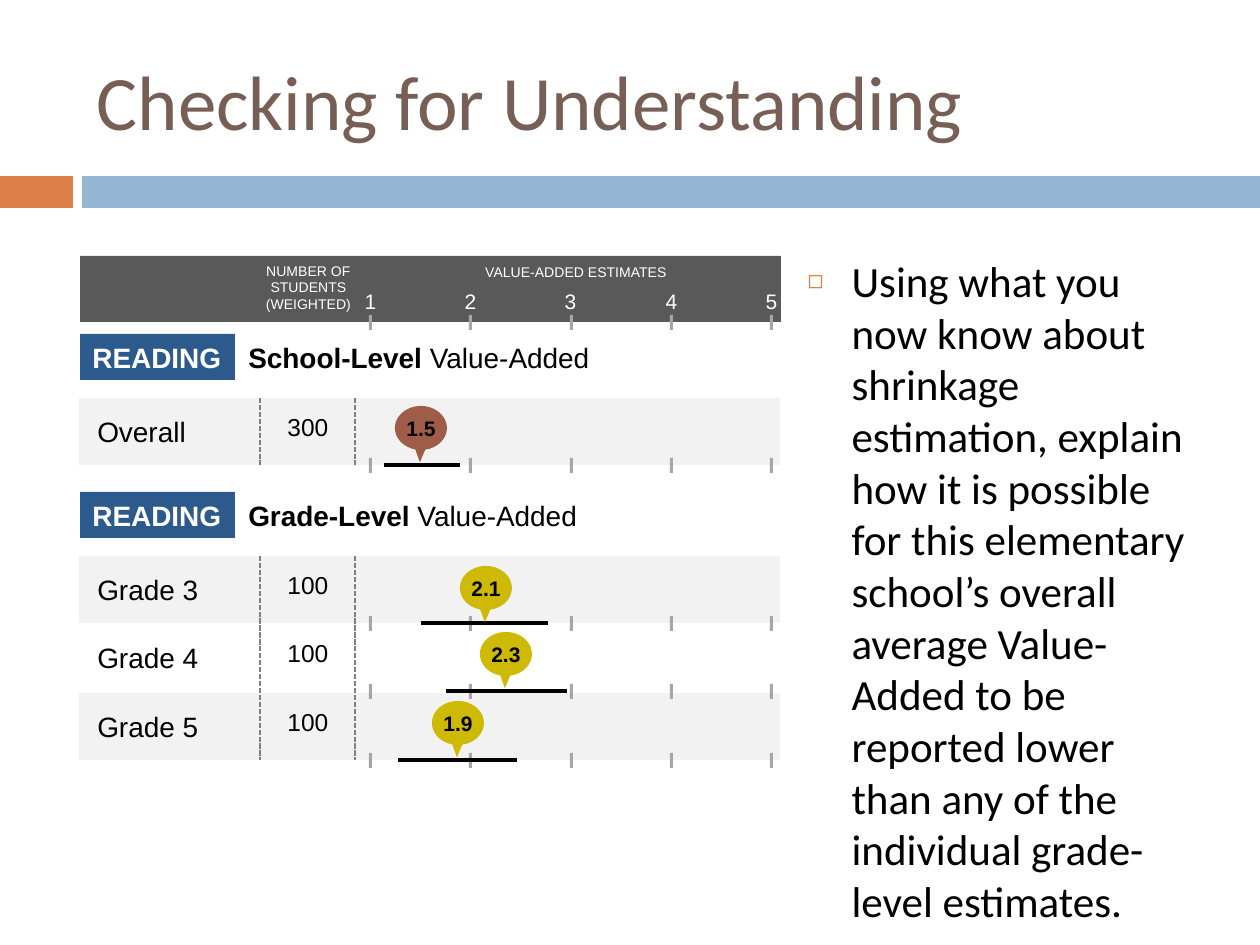
from dataclasses import dataclass
from typing import Any

from lxml.etree import SubElement
from pptx import Presentation
from pptx.dml.color import RGBColor
from pptx.enum.dml import MSO_LINE
from pptx.enum.shapes import MSO_CONNECTOR as Connector, MSO_SHAPE as Preset
from pptx.enum.text import MSO_ANCHOR as Anchor, MSO_AUTO_SIZE as AutoSize, PP_ALIGN as Align
from pptx.oxml.ns import qn
from pptx.util import Emu, Pt

SCALE = 914400 / 126
ROW_LEFT, ROW_WIDTH, ROW_HEIGHT = 79, 701, 67
TICK_LEFT, TICK_STEP, TICK_WIDTH, TICK_HEIGHT = 369, 100.25, 3, 15
SCORES = range(1, 6)
RUST, OLIVE = "9F5C49", "CEB904"
GRAY, BLUE, WHITE, BLACK = "F2F2F2", "2C5A8C", "FFFFFF", "000000"
LABEL = {"name": "Arial", "size": Pt(16), "bold": False}
STRONG = LABEL | {"bold": True}
COUNT = LABEL | {"size": Pt(14)}
SCORE = LABEL | {"size": Pt(12)}
CAPTION = LABEL | {"size": Pt(8)}


@dataclass(frozen=True)
class Box:
    left: int
    top: int
    width: int
    height: int

    def emu(self) -> list[Emu]:
        return [px(value) for value in (self.left, self.top, self.width, self.height)]


@dataclass(frozen=True)
class Section:
    top: int
    level: str


@dataclass(frozen=True)
class Row:
    label: str
    count: str
    top: int
    estimate: str
    callout_left: int
    callout_top: int
    interval: tuple[int, int]
    color: str
    shaded: bool = True


SECTIONS = [Section(334, "School-Level"), Section(492, "Grade-Level")]
ROWS = [
    Row("Overall", "300", 398, "1.5", 395, 406, (384, 460), RUST),
    Row("Grade 3", "100", 556, "2.1", 460, 566, (421, 548), OLIVE),
    Row("Grade 4", "100", 624, "2.3", 480, 632, (446, 567), OLIVE, False),
    Row("Grade 5", "100", 693, "1.9", 432, 701, (398, 517), OLIVE),
]


def px(value: int) -> Emu:
    return Emu(round(value * SCALE))


def rgb(value: str) -> RGBColor:
    return RGBColor.from_string(value)


def apply(target: Any, values: dict[str, Any]) -> None:
    for name, value in values.items():
        setattr(target, name, value)


def add_block(slide: Any, box: Box, color: str, preset: Preset = Preset.RECTANGLE) -> Any:
    shape = slide.shapes.add_shape(preset, *box.emu())
    shape.shadow.inherit = False
    shape.fill.solid()
    shape.fill.fore_color.rgb = rgb(color)
    shape.line.fill.background()
    return shape


def write(frame: Any, lines: list[list[tuple[str, dict]]], color: str,
          align: Align = Align.LEFT, anchor: Anchor = Anchor.TOP) -> None:
    apply(frame, {"word_wrap": False, "auto_size": AutoSize.NONE, "vertical_anchor": anchor})
    for index, runs in enumerate(lines):
        paragraph = frame.add_paragraph() if index else frame.paragraphs[0]
        paragraph.alignment = align
        for text, font in runs:
            run = paragraph.add_run()
            run.text = text
            apply(run.font, font)
            run.font.color.rgb = rgb(color)


def add_text(slide: Any, box: Box, lines: list[list[tuple[str, dict]]], color: str = BLACK,
             align: Align = Align.LEFT) -> None:
    write(slide.shapes.add_textbox(*box.emu()).text_frame, lines, color, align)


def add_line(slide: Any, start: tuple[int, int], end: tuple[int, int],
             color: str, values: dict[str, Any]) -> None:
    points = [px(value) for value in (*start, *end)]
    connector = slide.shapes.add_connector(Connector.STRAIGHT, *points)
    SubElement(connector._element.spPr, qn("a:effectLst"))
    connector.line.color.rgb = rgb(color)
    apply(connector.line, values)


def add_ticks(slide: Any, top: int) -> None:
    for index in range(len(SCORES)):
        left = round(TICK_LEFT + TICK_STEP * index)
        add_block(slide, Box(left, top, TICK_WIDTH, TICK_HEIGHT), "A6A6A6")


def add_dividers(slide: Any, top: int, bottom: int) -> None:
    for left in (260, 355):
        add_line(slide, (left, top), (left, bottom), "808080",
                 {"width": Pt(1), "dash_style": MSO_LINE.SQUARE_DOT})


def add_header(slide: Any) -> None:
    add_block(slide, Box(80, 256, 701, 66), "595959")
    captions = ["NUMBER OF", "STUDENTS", "(WEIGHTED)"]
    add_text(slide, Box(253, 256, 111, 63), [[(text, CAPTION)] for text in captions],
             WHITE, Align.CENTER)
    add_text(slide, Box(471, 257, 210, 30), [[("VALUE-ADDED ESTIMATES", CAPTION)]],
             WHITE, Align.CENTER)
    for index, score in enumerate(SCORES):
        left = round(TICK_LEFT - 17 + TICK_STEP * index)
        add_text(slide, Box(left, 282, 37, 38), [[(str(score), SCORE)]], WHITE, Align.CENTER)
    add_ticks(slide, 315)


def add_section(slide: Any, section: Section) -> None:
    badge = add_block(slide, Box(80, section.top, 155, 46), BLUE)
    write(badge.text_frame, [[("READING", STRONG)]], WHITE)
    add_text(slide, Box(236, section.top, 364, 46),
             [[(section.level, STRONG), (" Value-Added", LABEL)]])


def add_row(slide: Any, row: Row) -> None:
    bottom = row.top + ROW_HEIGHT
    add_text(slide, Box(85, row.top + 10, 127, 46), [[(row.label, LABEL)]])
    add_text(slide, Box(275, row.top + 8, 66, 43), [[(row.count, COUNT)]], align=Align.CENTER)
    add_ticks(slide, row.top + 60)
    start, end = row.interval
    add_line(slide, (start, bottom), (end, bottom), BLACK, {"width": Pt(2.5)})
    callout = add_block(slide, Box(row.callout_left, row.callout_top, 52, 44), row.color,
                        Preset.OVAL_CALLOUT)
    callout.adjustments[0], callout.adjustments[1] = -0.02, 0.78
    apply(callout.text_frame, dict.fromkeys(
        ("margin_left", "margin_top", "margin_right", "margin_bottom"), 0))
    write(callout.text_frame, [[(row.estimate, SCORE | {"bold": True})]], BLACK,
          Align.CENTER, Anchor.MIDDLE)


def place(placeholder: Any, box: Box, anchor: Anchor) -> Any:
    apply(placeholder, dict(zip(("left", "top", "width", "height"), box.emu())))
    apply(placeholder.text_frame,
          {"word_wrap": True, "auto_size": AutoSize.NONE, "vertical_anchor": anchor})
    return placeholder.text_frame.paragraphs[0]


def fill_title(slide: Any) -> None:
    paragraph = place(slide.shapes.title, Box(84, 32, 1124, 136), Anchor.MIDDLE)
    paragraph.text = "Checking for Understanding"
    paragraph.alignment = Align.LEFT
    apply(paragraph.font, {"name": "Calibri", "size": Pt(44)})
    paragraph.font.color.rgb = rgb("775F55")


def fill_body(slide: Any) -> None:
    paragraph = place(slide.placeholders[1], Box(795, 248, 412, 604), Anchor.TOP)
    paragraph.text = ("Using what you now know about shrinkage estimation, explain how it is "
                      "possible for this elementary school’s overall average Value-Added to be "
                      "reported lower than any of the individual grade-level estimates.")
    properties = paragraph._p.get_or_add_pPr()
    properties.set("marL", str(px(44)))
    properties.set("indent", str(-px(44)))
    SubElement(SubElement(properties, qn("a:buClr")), qn("a:srgbClr"), val="DD8047")
    SubElement(properties, qn("a:buSzPct"), val="60000")
    SubElement(properties, qn("a:buChar"), char="◻")
    paragraph.space_before = Pt(0)
    apply(paragraph.font, {"name": "Calibri", "size": Pt(24.6)})
    paragraph.font.color.rgb = rgb(BLACK)


def main() -> None:
    presentation = Presentation()
    presentation.slide_width, presentation.slide_height = px(1260), px(945)
    slide = presentation.slides.add_slide(presentation.slide_layouts[1])
    add_block(slide, Box(0, 176, 73, 32), "DD8047")
    add_block(slide, Box(82, 176, 1178, 32), "94B6D2")
    fill_title(slide)
    fill_body(slide)
    add_header(slide)
    for section in SECTIONS:
        add_section(slide, section)
    for row in ROWS:
        if row.shaded:
            add_block(slide, Box(ROW_LEFT, row.top, ROW_WIDTH, ROW_HEIGHT), GRAY)
    for first, last in ((ROWS[0], ROWS[0]), (ROWS[1], ROWS[-1])):
        add_dividers(slide, first.top, last.top + ROW_HEIGHT)
    for row in ROWS:
        add_row(slide, row)
    presentation.save("out.pptx")


if __name__ == "__main__":
    main()
